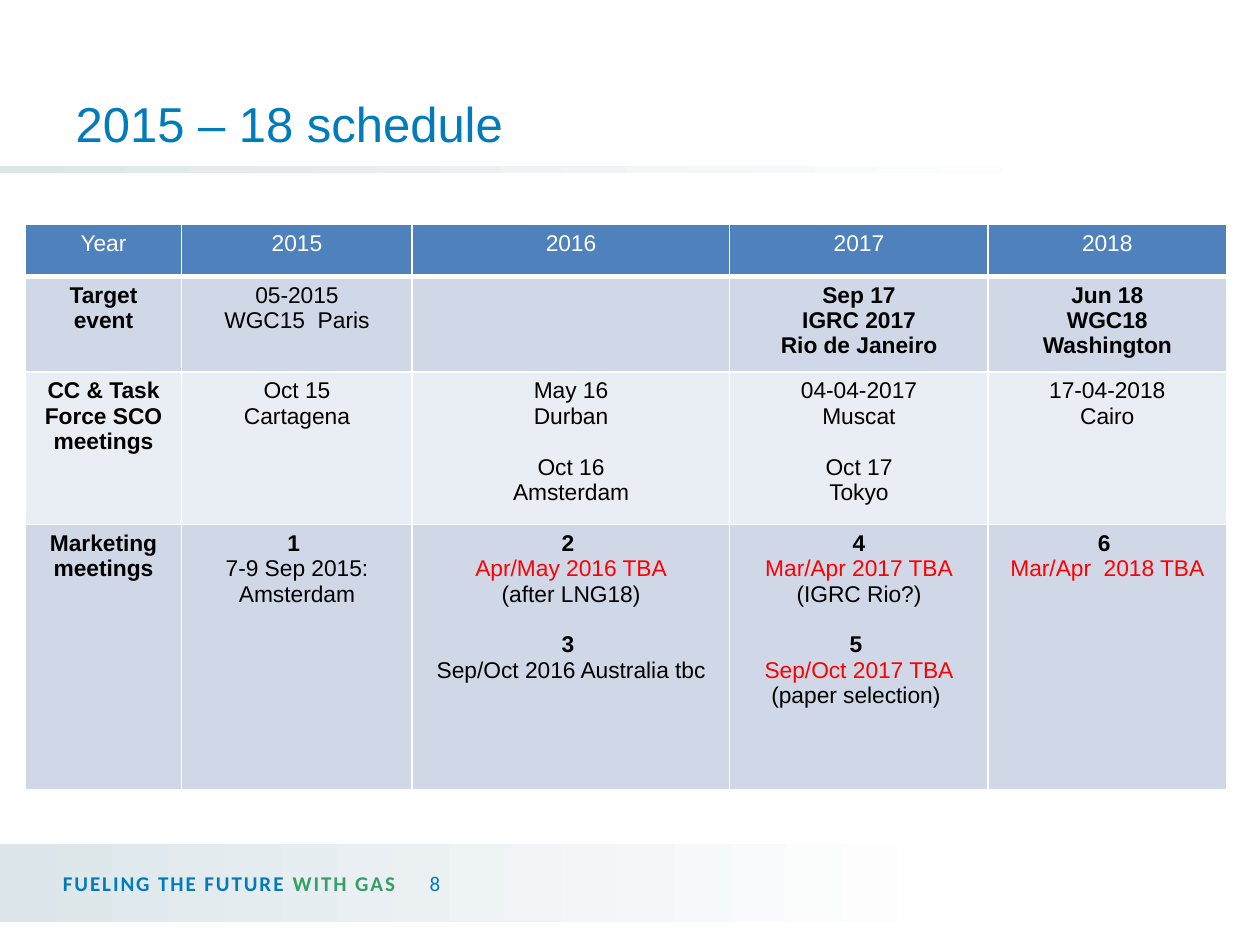
from dataclasses import dataclass

import pptx
import pptx.dml.color
import pptx.enum.shapes
import pptx.enum.text
import pptx.oxml
import pptx.oxml.ns
import pptx.util

Cm = pptx.util.Cm
Pt = pptx.util.Pt
RGB = pptx.dml.color.RGBColor
ANCHOR = pptx.enum.text.MSO_ANCHOR
ALIGN = pptx.enum.text.PP_ALIGN

BLUE = RGB(0x00, 0x7B, 0xBC)
GREEN = RGB(0x35, 0x9F, 0x66)
MIST = RGB(0xDC, 0xE6, 0xEA)
WHITE = RGB(0xFF, 0xFF, 0xFF)
BLACK = RGB(0x00, 0x00, 0x00)
RED = RGB(0xFF, 0x00, 0x00)
HEADER_FILL = RGB(0x4F, 0x81, 0xBD)
DARK_BAND = RGB(0xD0, 0xD8, 0xE8)
LIGHT_BAND = RGB(0xE9, 0xED, 0xF4)


@dataclass
class Line:
    text: str
    bold: bool = False
    color: RGB = BLACK
    gap: bool = False  # starts a second meeting in the same cell


def plain(*texts):
    return [Line(text) for text in texts]


def strong(*texts):
    return [Line(text, bold=True) for text in texts]


def meeting(number, date, *details, tba=True, gap=False):
    return [Line(number, bold=True, gap=gap),
            Line(date, color=RED if tba else BLACK), *plain(*details)]


YEARS = ["Year", "2015", "2016", "2017", "2018"]
SCHEDULE = [
    [[Line(year, color=WHITE)] for year in YEARS],
    [strong("Target event"),
     plain("05-2015", "WGC15  Paris"),
     [],
     strong("Sep 17", "IGRC 2017", "Rio de Janeiro"),
     strong("Jun 18", "WGC18", "Washington")],
    [strong("CC & Task Force SCO meetings"),
     plain("Oct 15", "Cartagena"),
     plain("May 16", "Durban") + [Line("Oct 16", gap=True), Line("Amsterdam")],
     plain("04-04-2017", "Muscat") + [Line("Oct 17", gap=True), Line("Tokyo")],
     plain("17-04-2018", "Cairo")],
    [strong("Marketing meetings"),
     meeting("1 ", "7-9 Sep 2015:", "Amsterdam", tba=False),
     meeting("2 ", "Apr/May 2016 TBA", "(after LNG18)")
     + meeting("3 ", "Sep/Oct 2016 Australia tbc", tba=False, gap=True),
     meeting(" 4 ", "Mar/Apr 2017 TBA", "(IGRC Rio?)")
     + meeting("5 ", "Sep/Oct 2017 TBA", "(paper selection) ", gap=True),
     meeting("6 ", "Mar/Apr  2018 TBA")],
]
ROW_FILLS = [HEADER_FILL, DARK_BAND, LIGHT_BAND, DARK_BAND]
COLUMN_WIDTHS = [3.15, 4.65, 6.4, 5.21, 4.8]
ROW_HEIGHTS = [1.04, 1.93, 3.07, 5.36]


def add_run(paragraph, text, font_name, size, color, bold=False):
    run = paragraph.add_run()
    run.text = text
    run.font.name = font_name
    run.font.size = Pt(size)
    run.font.color.rgb = color
    run.font.bold = bold
    return run


def add_fading_band(slide, left, top, width, height, fade_end):
    band = slide.shapes.add_shape(pptx.enum.shapes.MSO_SHAPE.RECTANGLE,
                                  left, top, width, height)
    band.shadow.inherit = False
    band.line.fill.background()
    band.fill.gradient()
    band.fill.gradient_angle = 0
    for stop, color, position in zip(band.fill.gradient_stops,
                                     (MIST, WHITE), (0, fade_end)):
        stop.color.rgb = color
        stop.position = position


def add_heading(slide, left, top, width, height):
    # Rule under the title
    add_fading_band(slide, 0, top + height + Cm(0.15), Cm(24.13), Cm(0.13), 0.89)
    title = slide.shapes.title
    title.left, title.top, title.width, title.height = left, top, width, height
    title.text_frame.vertical_anchor = ANCHOR.BOTTOM
    paragraph = title.text_frame.paragraphs[0]
    paragraph.alignment = ALIGN.LEFT
    add_run(paragraph, "2015 – 18 schedule", "Arial", 28, BLUE)


def add_footer_box(slide, left, top, width, height):
    box = slide.shapes.add_textbox(left, top, width, height)
    box.text_frame.word_wrap = True
    box.text_frame.vertical_anchor = ANCHOR.MIDDLE
    return box.text_frame


def add_footer(slide, left, top, width, height):
    add_fading_band(slide, left, top, width, height, 0.98)
    text_top, text_height = top + Cm(0.28), Cm(1.02)
    # Slogan
    slogan = add_footer_box(slide, left + Cm(1.27), text_top, Cm(7.14), text_height)
    slogan.margin_left = 0
    for text, color in (("FUELING THE FUTURE ", BLUE), ("WITH GAS", GREEN)):
        run = add_run(slogan.paragraphs[0], text, "Calibri", 12, color, bold=True)
        run.font._element.set("spc", "110")
    # Page number
    number = add_footer_box(slide, left + Cm(8.41), text_top, Cm(2.03), text_height)
    add_run(number.paragraphs[0], "8", "Calibri", 12, BLUE)


def set_borders(cell, bottom_width):
    properties = cell._tc.get_or_add_tcPr()
    widths = {"lnL": 1, "lnR": 1, "lnT": 1, "lnB": bottom_width}
    for index, (side, width) in enumerate(widths.items()):
        border = pptx.oxml.parse_xml(
            f'<a:{side} {pptx.oxml.ns.nsdecls("a")} w="{Pt(width)}">'
            f'<a:solidFill><a:srgbClr val="{WHITE}"/></a:solidFill></a:{side}>')
        properties.insert(index, border)


def fill_cell(cell, lines, color, is_header):
    cell.fill.solid()
    cell.fill.fore_color.rgb = color
    set_borders(cell, 3 if is_header else 1)
    frame = cell.text_frame
    for index, line in enumerate(lines):
        paragraph = frame.add_paragraph() if index else frame.paragraphs[0]
        paragraph.alignment = ALIGN.CENTER
        if line.gap:
            paragraph.space_before = Pt(14.5)
        add_run(paragraph, line.text, "Arial", 13, line.color, line.bold)


def add_schedule(slide, left, top):
    table = slide.shapes.add_table(
        len(ROW_HEIGHTS), len(COLUMN_WIDTHS), left, top,
        Cm(sum(COLUMN_WIDTHS)), Cm(sum(ROW_HEIGHTS))).table
    for column, width in zip(table.columns, COLUMN_WIDTHS):
        column.width = Cm(width)
    for index, row in enumerate(table.rows):
        row.height = Cm(ROW_HEIGHTS[index])
        for cell, lines in zip(row.cells, SCHEDULE[index]):
            fill_cell(cell, lines, ROW_FILLS[index], index == 0)


def main():
    deck = pptx.Presentation()
    deck.slide_width, deck.slide_height = Cm(25.4), Cm(19.05)
    slide = deck.slides.add_slide(deck.slide_layouts[5])
    add_footer(slide, 0, Cm(17.02), Cm(19.63), Cm(1.57))
    add_heading(slide, Cm(1.27), Cm(0.03), Cm(22.86), Cm(3.17))
    add_schedule(slide, Cm(0.51), Cm(4.53))
    deck.save("out.pptx")


if __name__ == "__main__":
    main()
